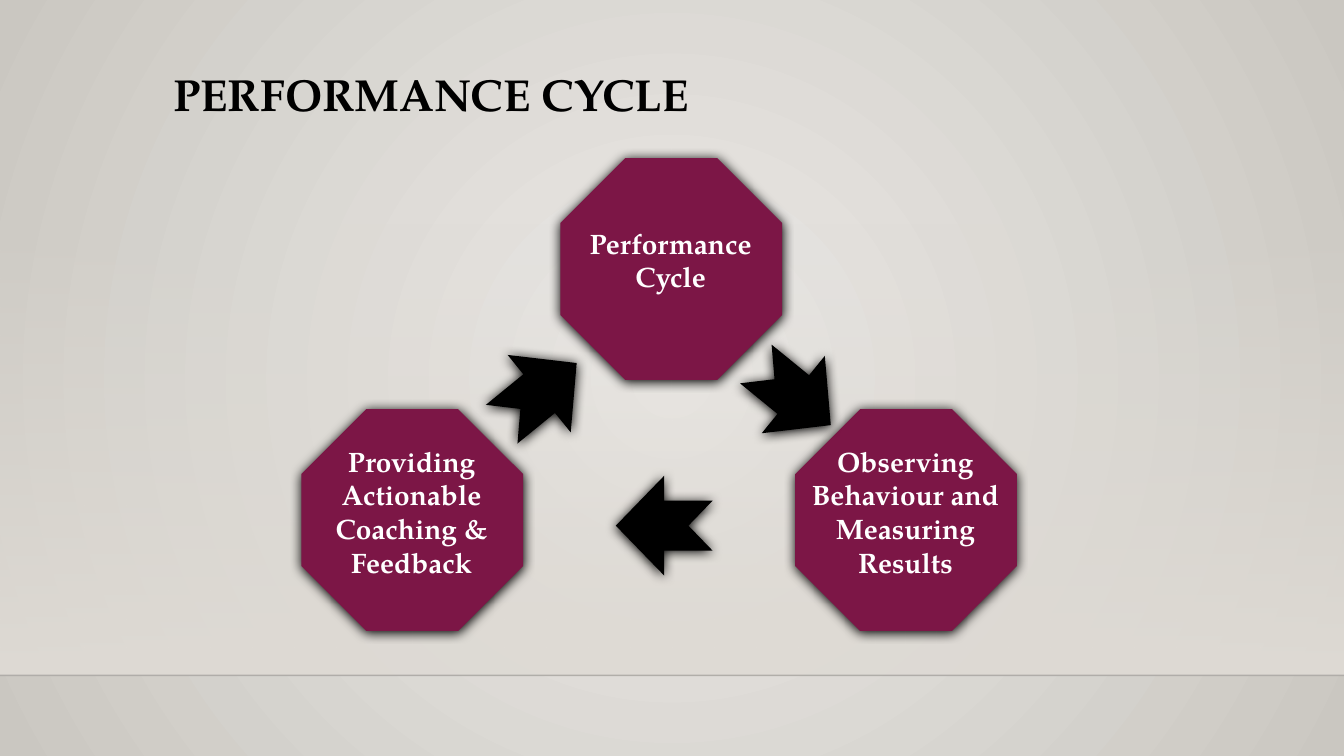
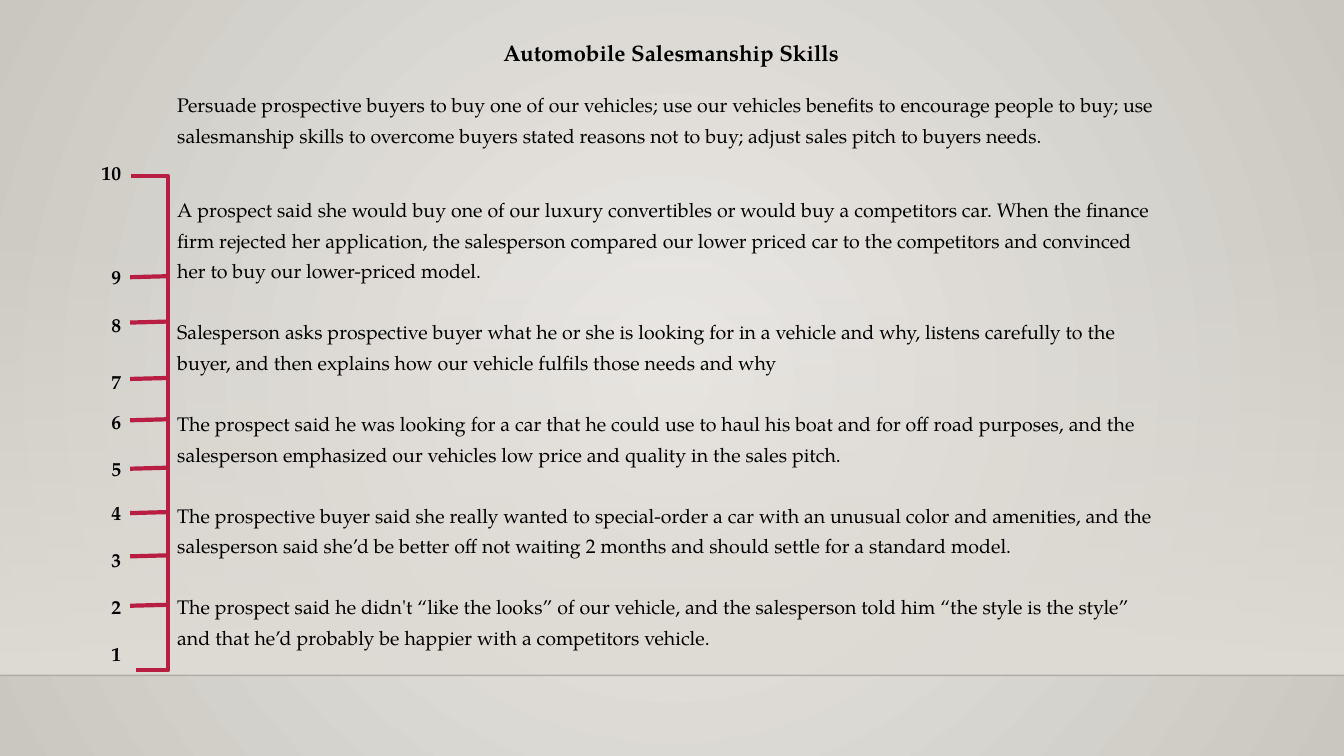
from lxml import etree
from pptx import Presentation
from pptx.dml.color import RGBColor
from pptx.enum.shapes import MSO_CONNECTOR, MSO_SHAPE
from pptx.enum.text import MSO_ANCHOR, PP_ALIGN
from pptx.oxml.ns import qn
from pptx.util import Pt

RECTANGLE, OCTAGON = MSO_SHAPE.RECTANGLE, MSO_SHAPE.OCTAGON
ARROW, STRAIGHT = MSO_SHAPE.NOTCHED_RIGHT_ARROW, MSO_CONNECTOR.STRAIGHT
TOP, BOTTOM = MSO_ANCHOR.TOP, MSO_ANCHOR.BOTTOM
LEFT, CENTER, RIGHT = PP_ALIGN.LEFT, PP_ALIGN.CENTER, PP_ALIGN.RIGHT

FONT = "TeX Gyre Pagella"
WIDTH, HEIGHT = 960, 540
FLOOR = 482.4
COLORS = {
    "center": "ECEAE7", "edge": "CAC7C1", "band": "DFDBD5", "rule": "000001",
    "ink": "000000", "light": "FFFFFF", "node": "7C1646", "scale": "B71E42",
}

NODE_SIZE = 158.4
# label, left, top, label offset from node top, label height
NODES = [
    ("Performance Cycle", 400.3, 113, 42.5, 61.2),
    ("Providing Actionable Coaching & Feedback", 215.3, 292.3, 30.3, 97.9),
    ("Observing Behaviour and Measuring Results", 568, 292.3, 30.3, 97.9),
]
# left, top, rotation
ARROWS = [(350.6, 245.5, 320.8), (532.1, 246.2, 39.2), (439.9, 339.8, 180)]

# space before, text
SKILLS = [
    (14.4, "Persuade prospective buyers to buy one of our vehicles; use our vehicles "
           "benefits to encourage people to buy; use salesmanship skills to overcome "
           "buyers stated reasons not to buy; adjust sales pitch to buyers needs."),
    (31.2, "A prospect said she would buy one of our luxury convertibles or would buy a "
           "competitors car. When the finance firm rejected her application, the "
           "salesperson compared our lower priced car to the competitors and convinced "
           "her to buy our lower-priced model."),
    (21.8, "Salesperson asks prospective buyer what he or she is looking for in a "
           "vehicle and why, listens carefully to the buyer, and then explains how our "
           "vehicle fulfils those needs and why"),
    (21.8, "The prospect said he was looking for a car that he could use to haul his "
           "boat and for off road purposes, and the salesperson emphasized our vehicles "
           "low price and quality in the sales pitch."),
    (21.8, "The prospective buyer said she really wanted to special-order a car with an "
           "unusual color and amenities, and the salesperson said she’d be better off "
           "not waiting 2 months and should settle for a standard model."),
    (21.8, "The prospect said he didn't “like the looks” of our vehicle, and the "
           "salesperson told him “the style is the style” and that he’d probably be "
           "happier with a competitors vehicle."),
]
# Space before each rating from 10 down to 1
RATING_GAPS = [0, 57.6, 16.8, 24, 12, 16.8, 14.4, 16.8, 16.8, 16.8]
TICKS = [72, 104.4, 144.7, 174.2, 208.8, 240.5, 271.4, 306.7]


def rgb(name):
    return RGBColor.from_string(COLORS[name])


def set_alpha(color, percent):
    etree.SubElement(color, qn("a:alpha"), val=str(percent * 1000))


def paint_gradient(fill, names):
    fill.gradient()
    for stop, name in zip(fill.gradient_stops, names):
        stop.color.rgb = rgb(name)


def add_text_box(page, box, anchor=TOP, bottom_inset=3.6):
    shape = page.shapes.add_textbox(*map(Pt, box))
    frame = shape.text_frame
    frame.word_wrap = True
    frame.vertical_anchor = anchor
    frame.margin_bottom = Pt(bottom_inset)
    return frame


def write(para, text, size, color="ink", bold=False, align=LEFT, before=0, spacing=None):
    para.alignment = align
    para.space_before = Pt(before)
    if spacing:
        para.line_spacing = spacing
    span = para.add_run()
    span.text = text
    span.font.name, span.font.size, span.font.bold = FONT, Pt(size), bold
    span.font.color.rgb = rgb(color)


def add_line(page, start, end, color, width):
    line = page.shapes.add_connector(STRAIGHT, *map(Pt, start + end))
    line.line.color.rgb = rgb(color)
    line.line.width = Pt(width)
    etree.SubElement(line.element.spPr, qn("a:effectLst"))
    return line


def add_shape(page, kind, box):
    shape = page.shapes.add_shape(kind, *map(Pt, box))
    shape.shadow.inherit = False
    shape.line.fill.background()
    return shape


def add_shadowed(page, kind, box, color):
    shape = add_shape(page, kind, box)
    shape.fill.solid()
    shape.fill.fore_color.rgb = rgb(color)
    effects = shape.element.spPr.find(qn("a:effectLst"))
    shadow = etree.SubElement(effects, qn("a:outerShdw"), blurRad=str(Pt(8.5)),
                              dist=str(Pt(1)), dir="5400000", rotWithShape="0")
    etree.SubElement(shadow, qn("a:srgbClr"), val=COLORS["ink"])
    return shape


def set_background(master):
    paint_gradient(master.background.fill, ("center", "edge"))
    gradient = master.element.find(".//" + qn("p:bgPr")).find(qn("a:gradFill"))
    gradient.remove(gradient.find(qn("a:lin")))
    circle = etree.SubElement(gradient, qn("a:path"), path="circle")
    etree.SubElement(circle, qn("a:fillToRect"), l="50000", t="50000", r="50000", b="50000")


def add_page(deck):
    page = deck.slides.add_slide(deck.slide_layouts[6])
    # Wall fading in towards the floor line
    band = add_shape(page, RECTANGLE, (0, 159.1, WIDTH, FLOOR - 159.1))
    paint_gradient(band.fill, ("band", "band"))
    band.fill.gradient_angle = 270
    set_alpha(band.element.spPr.find(".//" + qn("a:srgbClr")), 0)
    rule = add_line(page, (0, FLOOR), (WIDTH, FLOOR), "rule", 1)
    set_alpha(rule.element.spPr.find(".//" + qn("a:srgbClr")), 20)
    return page


def add_node(page, label, left, top, label_offset, label_height):
    add_shadowed(page, OCTAGON, (left, top, NODE_SIZE, NODE_SIZE), "node")
    box = (left - 1.9, top + label_offset, NODE_SIZE + 2.9, label_height)
    frame = add_text_box(page, box, BOTTOM, 7.2)
    write(frame.paragraphs[0], label, 20, "light", True, CENTER)


def add_cycle_page(deck):
    page = add_page(deck)
    title = add_text_box(page, (116.6, 49, 612, 44.6), BOTTOM, 7.2)
    write(title.paragraphs[0], "PERFORMANCE CYCLE", 32, bold=True)
    for node in NODES:
        add_node(page, *node)
    for left, top, rotation in ARROWS:
        arrow = add_shadowed(page, ARROW, (left, top, 69.1, 71.3), "ink")
        arrow.rotation = rotation


def add_skill_text(page, box):
    frame = add_text_box(page, box)
    write(frame.paragraphs[0], "Automobile Salesmanship Skills", 16, bold=True, align=CENTER)
    for gap, text in SKILLS:
        write(frame.add_paragraph(), text, 14, before=gap, spacing=1.3)


def add_rating_scale(page, left, top, width, height):
    right, bottom = left + width, top + height
    # Bracket
    builder = page.shapes.build_freeform(Pt(left), Pt(top))
    corners = [(right, top), (right, bottom), (left + 3.6, bottom)]
    builder.add_line_segments([(Pt(x), Pt(y)) for x, y in corners], close=False)
    bracket = builder.convert_to_shape()
    bracket.shadow.inherit = False
    bracket.fill.background()
    bracket.line.color.rgb = rgb("scale")
    bracket.line.width = Pt(3)
    # Ratings
    frame = add_text_box(page, (left - 50, top - 14.4, 50, height + 18))
    for index, gap in enumerate(RATING_GAPS):
        para = frame.add_paragraph() if index else frame.paragraphs[0]
        write(para, str(10 - index), 14, bold=True, align=RIGHT, before=gap)
    # Ticks
    for offset in TICKS:
        y = top + offset
        add_line(page, (left - 0.7, y), (right - 0.7, y - 0.7), "scale", 3)


def add_skills_page(deck):
    page = add_page(deck)
    add_skill_text(page, (119.5, 24.5, 720, 453.6))
    add_rating_scale(page, 93.6, 126, 26.6, 352.8)


def main():
    deck = Presentation()
    deck.slide_width, deck.slide_height = Pt(WIDTH), Pt(HEIGHT)
    set_background(deck.slide_master)
    add_cycle_page(deck)
    add_skills_page(deck)
    deck.save("out.pptx")


if __name__ == "__main__":
    main()
